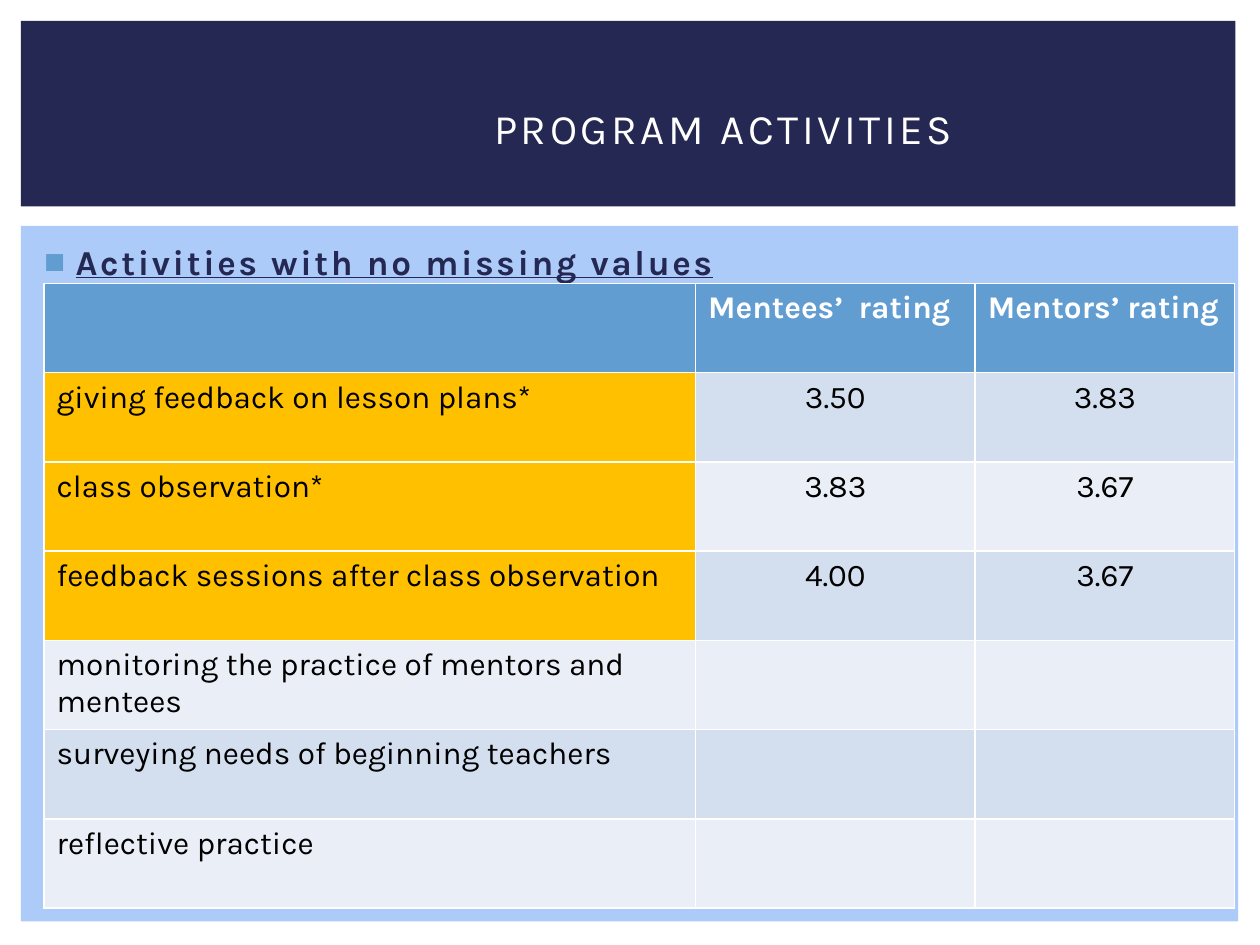
import pptx
import pptx.util
import pptx.dml.color
import pptx.enum.shapes
import pptx.enum.text
import pptx.oxml

Pt = pptx.util.Pt
RGB = pptx.dml.color.RGBColor
ALIGN = pptx.enum.text.PP_ALIGN
ANCHOR = pptx.enum.text.MSO_ANCHOR

WHITE = RGB(0xFF, 0xFF, 0xFF)
BLACK = RGB(0, 0, 0)
NAVY = RGB(0x24, 0x28, 0x52)
SKY = RGB(0xAC, 0xCB, 0xF9)
BLUE = RGB(0x62, 0x9D, 0xD1)
GOLD = RGB(0xFF, 0xC0, 0x00)
BANDS = RGB(0xD3, 0xDF, 0xEE), RGB(0xEA, 0xEF, 0xF7)
FACE = "Karla"

COLS = 372.24, 159.84, 148.32
HEAD = "", "Mentees’  rating", "Mentors’ rating"
ROWS = [
    ("giving feedback on lesson plans*", "3.50", "3.83"),
    ("class observation*", "3.83", "3.67"),
    ("feedback sessions after class observation", "4.00", "3.67"),
    ("monitoring the practice of mentors and mentees", "", ""),
    ("surveying needs of beginning teachers", "", ""),
    ("reflective practice", "", ""),
]


def place(shape, box):
    shape.left, shape.top, shape.width, shape.height = map(Pt, box)


def style(para, size, color, bold=False):
    font = para.font
    font.name, font.size, font.bold = FACE, Pt(size), bold
    font.color.rgb = color


def space_out(para, points):
    """Widen the gaps between letters."""
    for run in para.runs:
        run._r.get_or_add_rPr().set("spc", str(round(points * 100)))


def add_panel(slide, box, color):
    """Draw a plain block behind all that is on the slide."""
    kind = pptx.enum.shapes.MSO_SHAPE.RECTANGLE
    panel = slide.shapes.add_shape(kind, *map(Pt, box))
    panel.shadow.inherit = False
    panel.fill.solid()
    panel.fill.fore_color.rgb = color
    panel.line.fill.background()
    slide.shapes._spTree.insert(2, panel._element)


def set_title(slide, box):
    title = slide.shapes.title
    place(title, box)
    frame = title.text_frame
    frame.text = "PROGRAM ACTIVITIES"
    frame.vertical_anchor = ANCHOR.MIDDLE
    para = frame.paragraphs[0]
    para.alignment = ALIGN.CENTER
    style(para, 24, WHITE)
    space_out(para, 2)


def set_body(slide, box):
    body = slide.placeholders[1]
    place(body, box)
    frame = body.text_frame
    frame.text = "Activities with no missing values"
    frame.auto_size = pptx.enum.text.MSO_AUTO_SIZE.NONE
    frame.vertical_anchor = ANCHOR.BOTTOM
    frame.margin_bottom = 0
    para = frame.paragraphs[0]
    para.space_before = 0
    style(para, 20, NAVY, True)
    para.font.underline = True
    space_out(para, 1.5)
    add_bullet(para, 21.6, 18)


def add_bullet(para, left, hang):
    props = para._p.get_or_add_pPr()
    props.set("marL", str(Pt(left)))
    props.set("indent", str(-Pt(hang)))
    space = "http://schemas.openxmlformats.org/drawingml/2006/main"
    parts = (
        f'<a:buClr xmlns:a="{space}"><a:srgbClr val="{BLUE}"/></a:buClr>',
        f'<a:buFont xmlns:a="{space}" typeface="Arial"/>',
        f'<a:buChar xmlns:a="{space}" char="■"/>',
    )
    last = props.find(f"{{{space}}}defRPr")
    for part in parts:
        last.addprevious(pptx.oxml.parse_xml(part))


def fill_cell(cell, text, fill, color, bold, align):
    cell.fill.solid()
    cell.fill.fore_color.rgb = fill
    cell.text = text
    para = cell.text_frame.paragraphs[0]
    para.alignment = align
    style(para, 18, color, bold)


def add_ratings(slide, box):
    """Add the table; its default style draws the white rules."""
    shape = slide.shapes.add_table(len(ROWS) + 1, len(COLS), *map(Pt, box))
    table = shape.table
    for col, width in zip(table.columns, COLS):
        col.width = Pt(width)
    for c, text in enumerate(HEAD):
        fill_cell(table.cell(0, c), text, BLUE, WHITE, True, ALIGN.LEFT)
    for r, row in enumerate(ROWS):
        for c, text in enumerate(row):
            rated = c == 0 and row[1]
            fill = GOLD if rated else BANDS[r % 2]
            align = ALIGN.CENTER if c else ALIGN.LEFT
            fill_cell(table.cell(r + 1, c), text, fill, BLACK, False, align)


def main():
    deck = pptx.Presentation()
    deck.slide_width, deck.slide_height = Pt(720), Pt(540)
    slide = deck.slides.add_slide(deck.slide_layouts[1])
    add_panel(slide, (12, 12, 694, 106), NAVY)
    add_panel(slide, (12, 129, 695.5, 397.5), SKY)
    set_body(slide, (14.4, 104.4, 661.7, 56.9))
    set_title(slide, (118.8, 31.7, 589, 82.8))
    add_ratings(slide, (25.2, 162, sum(COLS), 357.1))
    deck.save("out.pptx")


if __name__ == "__main__":
    main()
